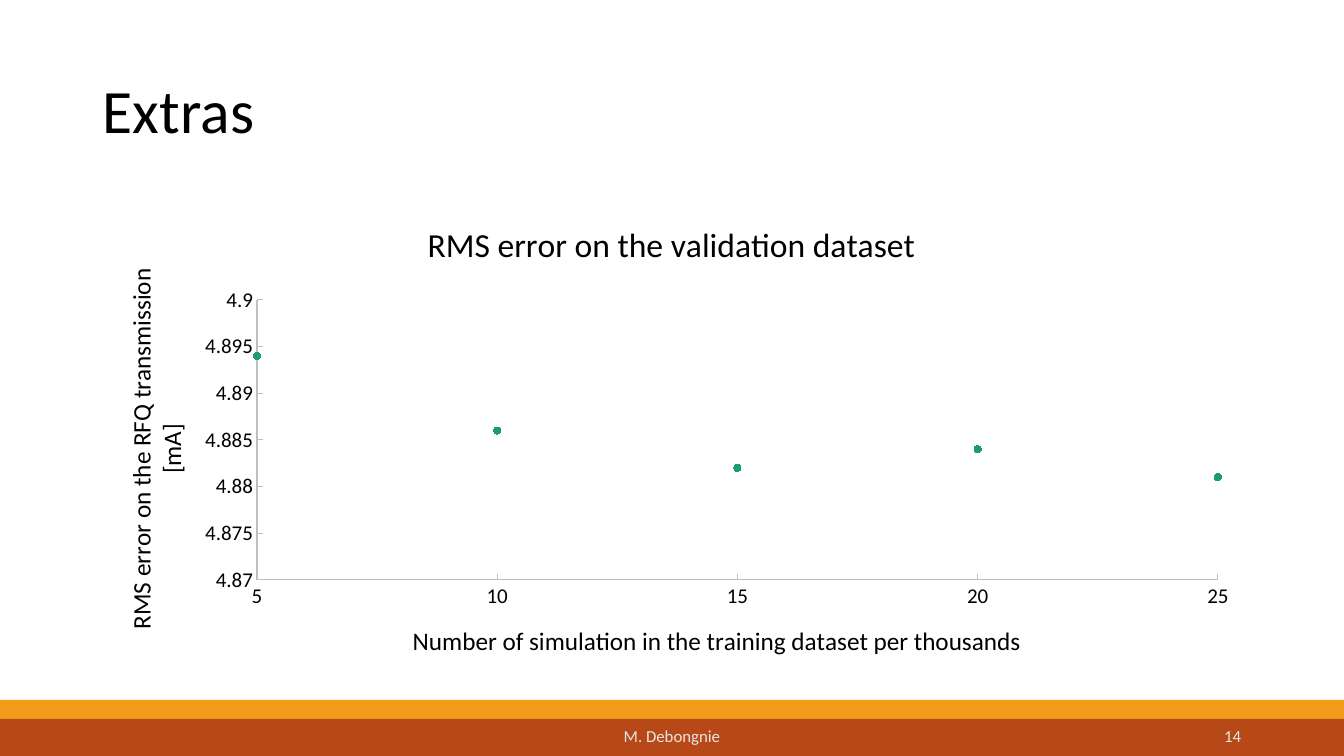
from dataclasses import dataclass

from lxml import etree
from pptx import Presentation
from pptx.chart.data import XyChartData
from pptx.dml.color import RGBColor
from pptx.enum.chart import XL_CHART_TYPE, XL_MARKER_STYLE, XL_TICK_MARK
from pptx.enum.shapes import MSO_SHAPE
from pptx.enum.text import MSO_ANCHOR, PP_ALIGN
from pptx.oxml.ns import qn
from pptx.util import Emu, Pt

EMU_PER_PX = 914400 / 100.8
FONT = "Calibri"
BLACK, GREY, PALE, GREEN = "000000", "BFBFBF", "E7E6E6", "1D9A78"
LEFT, CENTER, RIGHT = PP_ALIGN.LEFT, PP_ALIGN.CENTER, PP_ALIGN.RIGHT
MIDDLE = MSO_ANCHOR.MIDDLE
RECTANGLE = MSO_SHAPE.RECTANGLE
SCATTER = XL_CHART_TYPE.XY_SCATTER
CIRCLE = XL_MARKER_STYLE.CIRCLE
TICK_INSIDE, TICK_NONE = XL_TICK_MARK.INSIDE, XL_TICK_MARK.NONE


@dataclass
class Box:
    left: int
    top: int
    width: int
    height: int

    def emu(self) -> list[Emu]:
        return [px(n) for n in (self.left, self.top, self.width, self.height)]


@dataclass
class Band:
    box: Box
    color: str


@dataclass
class Label:
    text: str
    box: Box
    size: int
    color: str
    align: PP_ALIGN
    spacing: float = 1.0


@dataclass
class AxisStyle:
    title: str
    minimum: float
    maximum: float
    step: float


BANDS = [
    Band(Box(0, 700, 1344, 37), "F19D19"),
    Band(Box(0, 719, 1344, 37), "B74919"),
]
LABELS = [
    Label("Extras", Box(93, 41, 1159, 146), 44, BLACK, LEFT, 0.9),
    Label("M. Debongnie", Box(445, 716, 454, 40), 12, PALE, CENTER),
    Label("14", Box(949, 716, 302, 40), 12, PALE, RIGHT),
]
CHART_BOX = Box(92, 201, 1159, 480)
PLOT_BOX = Box(257, 300, 961, 280)
RMS_ERRORS = {5: 4.894, 10: 4.886, 15: 4.882, 20: 4.884, 25: 4.881}
X_AXIS = AxisStyle("Number of simulation in the training dataset per thousands",
                   5, 25, 5)
Y_AXIS = AxisStyle("RMS error on the RFQ transmission [mA]", 4.87, 4.9, 0.005)
Y_TITLE_LEFT, Y_TITLE_TOP = 119, 264


def px(length: int) -> Emu:
    return Emu(round(length * EMU_PER_PX))


def rgb(color: str) -> RGBColor:
    return RGBColor.from_string(color)


def set_font(font, *, size: int, color: str = BLACK) -> None:
    font.name = FONT
    font.size = Pt(size)
    font.bold = False
    font.color.rgb = rgb(color)


def write_text(frame, text: str, *, size: int, color: str = BLACK,
               align: PP_ALIGN = CENTER, spacing: float | None = None) -> None:
    paragraph = frame.paragraphs[0]
    paragraph.alignment = align
    paragraph.line_spacing = spacing
    run = paragraph.add_run()
    run.text = text
    set_font(run.font, size=size, color=color)


def add_band(slide, band: Band) -> None:
    shape = slide.shapes.add_shape(RECTANGLE, *band.box.emu())
    shape.shadow.inherit = False
    shape.fill.solid()
    shape.fill.fore_color.rgb = rgb(band.color)
    shape.line.fill.background()


def add_label(slide, label: Label) -> None:
    frame = slide.shapes.add_textbox(*label.box.emu()).text_frame
    frame.word_wrap = True
    frame.vertical_anchor = MIDDLE
    write_text(frame, label.text, size=label.size, color=label.color,
               align=label.align, spacing=label.spacing)


def style_axis(axis, style: AxisStyle) -> None:
    axis.minimum_scale, axis.maximum_scale = style.minimum, style.maximum
    axis.major_unit = style.step
    axis.has_major_gridlines = False
    axis.major_tick_mark, axis.minor_tick_mark = TICK_INSIDE, TICK_NONE
    axis.format.line.color.rgb = rgb(GREY)
    axis.format.line.width = Pt(0.75)
    axis.tick_labels.number_format = "General"
    axis.tick_labels.number_format_is_linked = False
    set_font(axis.tick_labels.font, size=15)
    write_text(axis.axis_title.text_frame, style.title, size=18)


def set_layout(element, index: int, settings: dict[str, str | float]) -> None:
    """Give a chart part a manual layout, as fractions of the chart frame."""
    layout = element.find(qn("c:layout"))
    if layout is None:
        layout = etree.Element(qn("c:layout"))
        element.insert(index, layout)
    manual = etree.SubElement(layout, qn("c:manualLayout"))
    for name, value in settings.items():
        etree.SubElement(manual, qn(f"c:{name}")).set("val", str(value))


def edge_settings(left: int, top: int) -> dict[str, str | float]:
    return {"xMode": "edge", "yMode": "edge",
            "x": (left - CHART_BOX.left) / CHART_BOX.width,
            "y": (top - CHART_BOX.top) / CHART_BOX.height}


def place_chart_parts(chart) -> None:
    plot_area = chart._chartSpace.find(".//" + qn("c:plotArea"))
    set_layout(plot_area, 0, {
        "layoutTarget": "inner",
        **edge_settings(PLOT_BOX.left, PLOT_BOX.top),
        "w": PLOT_BOX.width / CHART_BOX.width,
        "h": PLOT_BOX.height / CHART_BOX.height,
    })
    set_layout(chart.value_axis.axis_title._element, 1,
               edge_settings(Y_TITLE_LEFT, Y_TITLE_TOP))


def add_error_chart(slide) -> None:
    data = XyChartData()
    points = data.add_series("Series 1")
    for thousands, error in RMS_ERRORS.items():
        points.add_data_point(thousands, error)
    chart = slide.shapes.add_chart(SCATTER, *CHART_BOX.emu(), data).chart
    chart.has_legend = False
    set_font(chart.font, size=10)
    write_text(chart.chart_title.text_frame,
               "RMS error on the validation dataset", size=24)
    chart.chart_title.include_in_layout = False
    style_axis(chart.category_axis, X_AXIS)
    style_axis(chart.value_axis, Y_AXIS)
    place_chart_parts(chart)

    # Markers only, all in one colour
    chart.plots[0].vary_by_categories = False
    series = chart.plots[0].series[0]
    series.smooth = False
    series.format.line.fill.background()
    series.marker.style = CIRCLE
    series.marker.size = 5
    series.marker.format.fill.solid()
    series.marker.format.fill.fore_color.rgb = rgb(GREEN)
    series.marker.format.line.color.rgb = rgb(GREEN)


def main() -> None:
    presentation = Presentation()
    presentation.slide_width, presentation.slide_height = px(1344), px(756)
    slide = presentation.slides.add_slide(presentation.slide_layouts[6])

    # Footer bands
    for band in BANDS:
        add_band(slide, band)
    # Title, author and slide number
    for label in LABELS:
        add_label(slide, label)
    # Scatter chart
    add_error_chart(slide)

    presentation.save("out.pptx")


if __name__ == "__main__":
    main()
